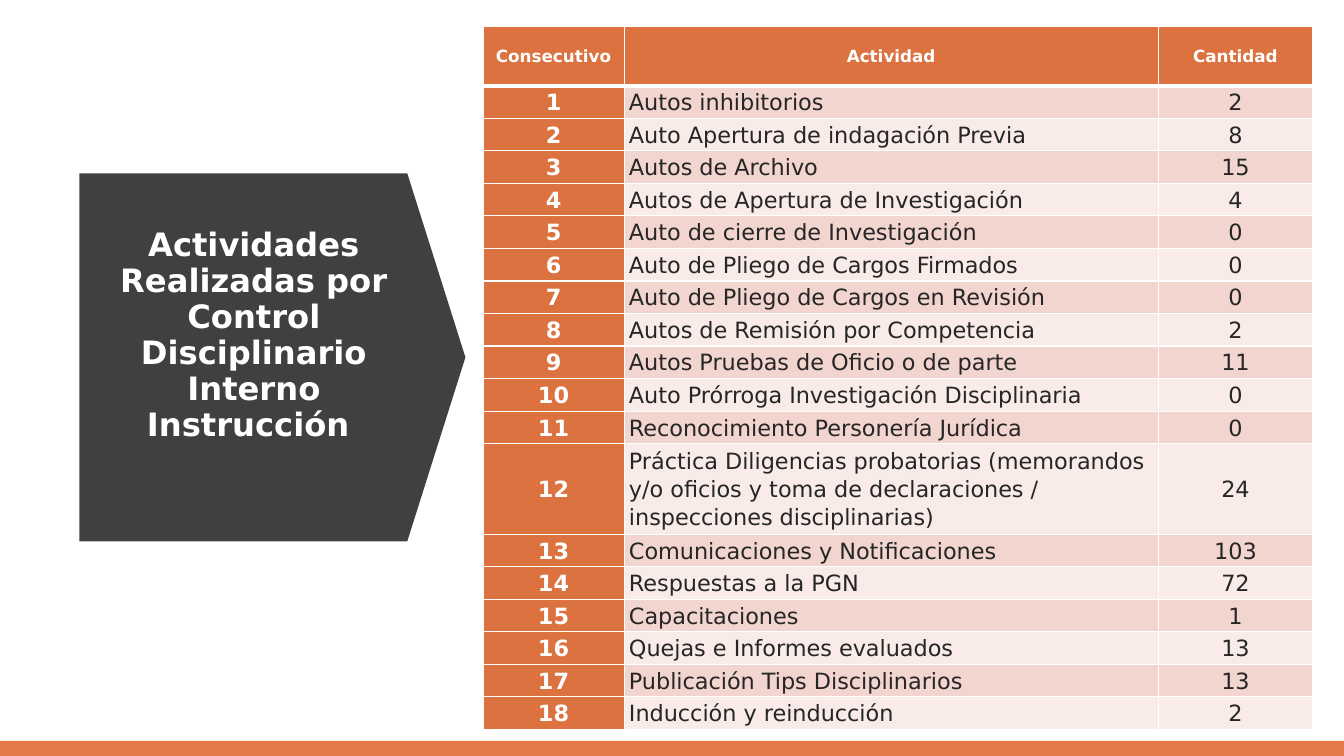
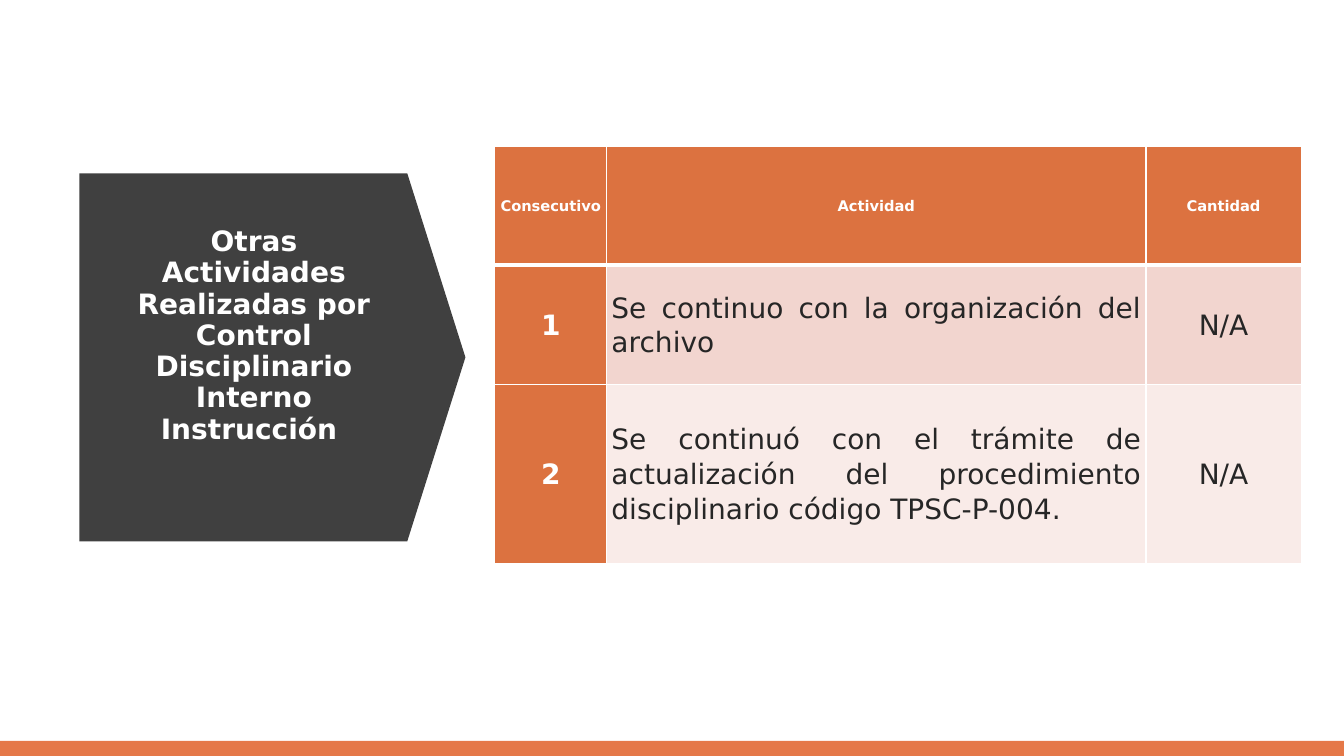
"""Build the two slides on the activities of Control Disciplinario Interno."""
from lxml import etree
from pptx import Presentation
from pptx.dml.color import RGBColor
from pptx.enum import shapes, text
from pptx.oxml import ns
from pptx.util import Cm, Pt

FONT = "DejaVu Sans"
WHITE = RGBColor(0xFF, 0xFF, 0xFF)
CHARCOAL = RGBColor(0x40, 0x40, 0x40)
INK = RGBColor(0x26, 0x26, 0x26)
BAND_ORANGE = RGBColor(0xE5, 0x78, 0x48)
TABLE_ORANGE = RGBColor(0xDC, 0x72, 0x40)
ROW_TINTS = (RGBColor(0xF2, 0xD5, 0xCF), RGBColor(0xF9, 0xEB, 0xE8))
CENTER, LEFT, JUSTIFY = (text.PP_ALIGN.CENTER, text.PP_ALIGN.LEFT,
                         text.PP_ALIGN.JUSTIFY)

HEADINGS = ("Consecutivo", "Actividad", "Cantidad")
ACTIVITIES = (
    ("Autos inhibitorios", 2),
    ("Auto Apertura de indagación Previa", 8),
    ("Autos de Archivo", 15),
    ("Autos de Apertura de Investigación", 4),
    ("Auto de cierre de Investigación", 0),
    ("Auto de Pliego de Cargos Firmados", 0),
    ("Auto de Pliego de Cargos en Revisión", 0),
    ("Autos de Remisión por Competencia", 2),
    ("Autos Pruebas de Oficio o de parte", 11),
    ("Auto Prórroga Investigación Disciplinaria", 0),
    ("Reconocimiento Personería Jurídica", 0),
    ("Práctica Diligencias probatorias (memorandos y/o oficios y toma de "
     "declaraciones / inspecciones disciplinarias)", 24),
    ("Comunicaciones y Notificaciones", 103),
    ("Respuestas a la PGN", 72),
    ("Capacitaciones", 1),
    ("Quejas e Informes evaluados", 13),
    ("Publicación Tips Disciplinarios", 13),
    ("Inducción y reinducción", 2),
)
OTHER_ACTIVITIES = (
    ("Se continuo con la organización del archivo", "N/A"),
    ("Se continuó con el trámite de actualización del procedimiento "
     "disciplinario código TPSC-P-004.", "N/A"),
)


def style_paragraph(paragraph, size, color, bold, align, spacing):
    """Format a paragraph whose runs all agree."""
    paragraph.alignment = align
    paragraph.line_spacing = spacing
    font = paragraph.font
    font.name, font.size, font.bold = FONT, Pt(size), bold
    font.color.rgb = color


def add_filled_shape(slide, kind, left, top, width, height, color):
    """Add a flat shape without outline, measured in centimetres."""
    shape = slide.shapes.add_shape(kind, Cm(left), Cm(top), Cm(width), Cm(height))
    shape.shadow.inherit = False
    shape.fill.solid()
    shape.fill.fore_color.rgb = color
    shape.line.fill.background()
    return shape


def add_master_band(prs, slide):
    """Put the orange bottom band on the master, behind everything else."""
    band = add_filled_shape(slide, shapes.MSO_SHAPE.RECTANGLE,
                            0, 18.67, 33.87, 0.38, BAND_ORANGE)
    band.element.nvSpPr.cNvPr.set("id", "20")
    prs.slide_master.shapes.element.insert(2, band.element)


def add_titled_arrow(slide, heading, size):
    """Place the title over the dark arrow on the left."""
    title = slide.shapes.title
    arrow = add_filled_shape(slide, shapes.MSO_SHAPE.PENTAGON,
                             2, 4.37, 9.73, 9.27, CHARCOAL)
    arrow.adjustments[0] = 0.158
    title.element.addprevious(arrow.element)
    title.left, title.top, title.width, title.height = (
        Cm(2.74), Cm(5.33), Cm(7.32), Cm(6.27))
    frame = title.text_frame
    frame.text = heading
    frame.word_wrap = True
    frame.auto_size = text.MSO_AUTO_SIZE.NONE
    frame.vertical_anchor = text.MSO_ANCHOR.MIDDLE
    style_paragraph(frame.paragraphs[0], size, WHITE, True, CENTER, 0.93)


def set_borders(cell, top, bottom):
    """Draw white cell borders with the given top and bottom widths."""
    properties = cell._tc.get_or_add_tcPr()
    for side, width in (("L", 1), ("R", 1), ("T", top), ("B", bottom)):
        line = etree.SubElement(properties, ns.qn(f"a:ln{side}"), w=str(Pt(width)))
        fill = etree.SubElement(line, ns.qn("a:solidFill"))
        etree.SubElement(fill, ns.qn("a:srgbClr"), val=str(WHITE))


def fill_cell(cell, content, background, size, color, bold, align):
    """Write and format one table cell."""
    cell.text = str(content)
    cell.vertical_anchor = text.MSO_ANCHOR.MIDDLE
    cell.margin_left = cell.margin_right = Cm(0.12)
    cell.margin_top = cell.margin_bottom = 0
    cell.fill.solid()
    cell.fill.fore_color.rgb = background
    style_paragraph(cell.text_frame.paragraphs[0], size, color, bold, align, 1.07)


def add_activity_table(slide, activities, left, top, widths, heights,
                       heading_size, size, align):
    """Add a numbered table of activities and their counts."""
    table = slide.shapes.add_table(
        len(heights), len(widths), Cm(left), Cm(top),
        Cm(sum(widths)), Cm(sum(heights))).table
    table.first_col = True
    for column, width in zip(table.columns, widths):
        column.width = Cm(width)
    for row, height in zip(table.rows, heights):
        row.height = Cm(height)
    rows = [HEADINGS] + [(number, *activity)
                         for number, activity in enumerate(activities, 1)]
    for r, contents in enumerate(rows):
        for c, content in enumerate(contents):
            cell = table.cell(r, c)
            set_borders(cell, 3 if r == 1 else 1, 3 if r == 0 else 1)
            if r == 0:
                fill_cell(cell, content, TABLE_ORANGE, heading_size, WHITE, True, CENTER)
            elif c == 0:
                fill_cell(cell, content, TABLE_ORANGE, size, WHITE, True, CENTER)
            else:
                fill_cell(cell, content, ROW_TINTS[(r - 1) % 2], size, INK, False,
                          align if c == 1 else CENTER)


def main():
    """Build and save the presentation."""
    prs = Presentation()
    prs.slide_width, prs.slide_height = Cm(33.87), Cm(19.05)
    title_only = prs.slide_layouts[5]

    summary = prs.slides.add_slide(title_only)
    add_master_band(prs, summary)
    add_titled_arrow(summary, "Actividades Realizadas por Control Disciplinario "
                              "Interno Instrucción ", 23)
    heights = [1.5] + [0.82] * 11 + [2.28] + [0.82] * 6
    add_activity_table(summary, ACTIVITIES, 12.17, 0.66, (3.56, 13.46, 3.89),
                       heights, 12, 16, LEFT)

    others = prs.slides.add_slide(title_only)
    add_titled_arrow(others, "Otras Actividades Realizadas por Control "
                             "Disciplinario Interno Instrucción ", 20)
    add_activity_table(others, OTHER_ACTIVITIES, 12.47, 3.68, (2.82, 13.59, 3.91),
                       (3, 3, 4.52), 10.5, 20, JUSTIFY)

    prs.save("out.pptx")


if __name__ == "__main__":
    main()
